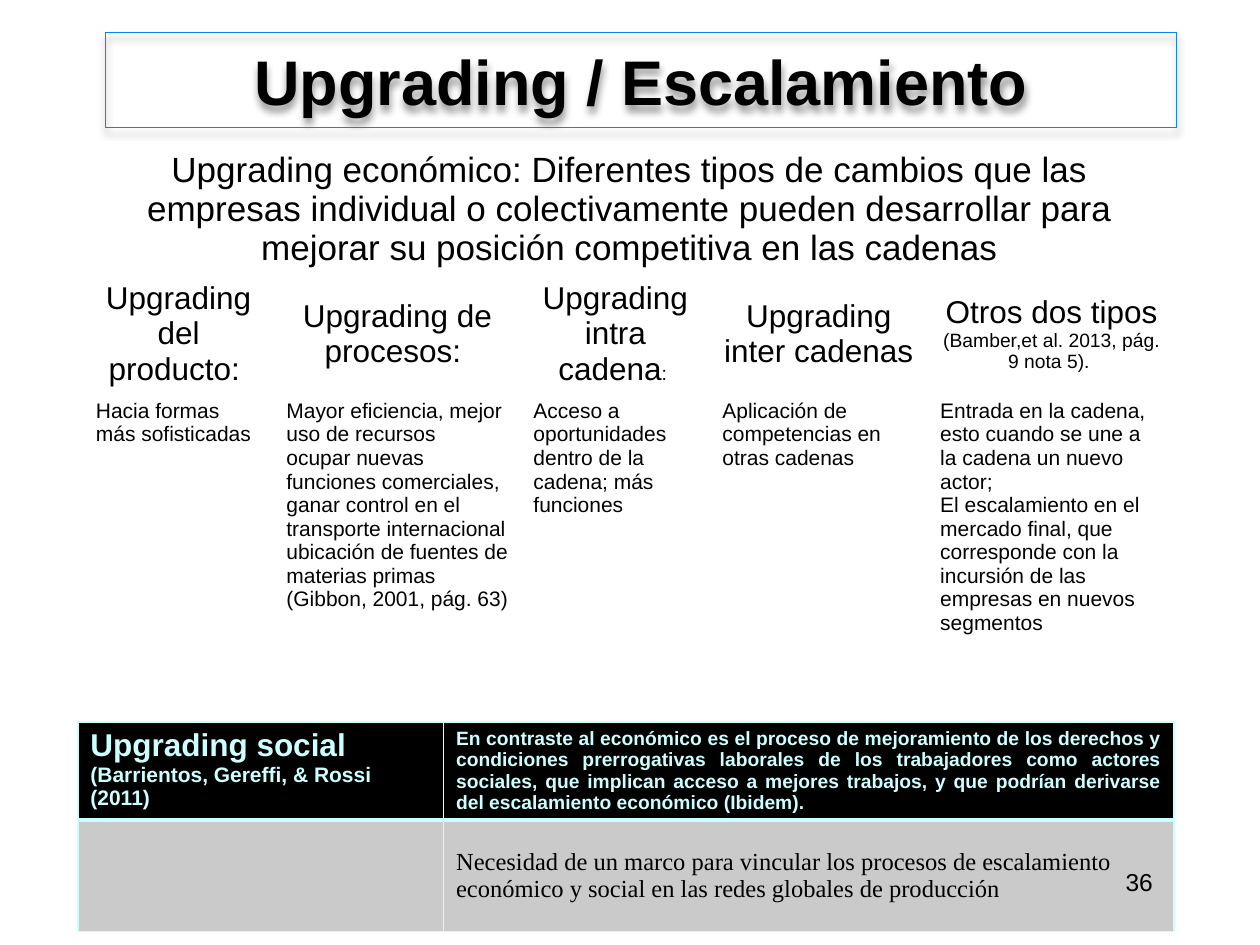
from dataclasses import dataclass
from typing import Optional

from lxml.etree import SubElement
from pptx import Presentation
from pptx.dml.color import RGBColor
from pptx.enum.shapes import MSO_SHAPE
from pptx.enum.text import MSO_ANCHOR, PP_ALIGN
from pptx.oxml import parse_xml
from pptx.oxml.ns import nsdecls, qn
from pptx.util import Cm, Pt


@dataclass(frozen=True)
class Theme:
    sans: str = "Arial"
    serif: str = "Times New Roman"
    ink: str = "000000"
    outline: str = "0A82FE"
    pale: str = "CCFFFF"
    band: str = "CACACA"
    title: float = 36
    intro: float = 20
    heading: float = 18
    closing: float = 14
    body: float = 12
    small: float = 11


THEME = Theme()


@dataclass(frozen=True)
class Span:
    text: str
    size: float = THEME.body
    color: str = THEME.ink
    bold: bool = False
    font: str = THEME.sans


@dataclass(frozen=True)
class Block:
    """Paragraphs, each a tuple of spans, with their shared layout."""
    paragraphs: tuple[tuple[Span, ...], ...] = ()
    align: PP_ALIGN = PP_ALIGN.LEFT
    anchor: MSO_ANCHOR = MSO_ANCHOR.TOP


@dataclass(frozen=True)
class Place:
    left: float
    top: float
    width: float
    height: float

    def lengths(self) -> tuple[Cm, ...]:
        return tuple(Cm(n) for n in (self.left, self.top, self.width, self.height))


def centered(*spans: Span) -> Block:
    return Block((spans,), PP_ALIGN.CENTER, MSO_ANCHOR.MIDDLE)


def body(*texts: str) -> Block:
    return Block(tuple((Span(text),) for text in texts))


def write(frame, block: Block) -> None:
    frame.word_wrap = True
    for index, spans in enumerate(block.paragraphs):
        para = frame.paragraphs[0] if index == 0 else frame.add_paragraph()
        para.alignment = block.align
        for span in spans:
            run = para.add_run()
            run.text = span.text
            run.font.name = span.font
            run.font.size = Pt(span.size)
            run.font.bold = span.bold
            run.font.color.rgb = RGBColor.from_string(span.color)


def draw_table(page, place: Place, columns: tuple[float, ...],
               rows: tuple[float, ...], blocks: list[list[Block]]):
    """Add an unfilled table and write one block into each listed cell."""
    frame = page.shapes.add_table(len(rows), len(columns), *place.lengths())
    table = frame.table
    table.first_row = table.horz_banding = False
    for column, width in zip(table.columns, columns):
        column.width = Cm(width)
    for row, height in zip(table.rows, rows):
        row.height = Cm(height)
    frame.height = Cm(place.height)
    for cell in table.iter_cells():
        cell.fill.background()
    for r, line in enumerate(blocks):
        for c, block in enumerate(line):
            cell = table.cell(r, c)
            cell.vertical_anchor = block.anchor
            write(cell.text_frame, block)
    return table


def set_borders(cell, color: str, top: float, bottom: float) -> None:
    properties = cell._tc.get_or_add_tcPr()
    edges = {"lnL": 1, "lnR": 1, "lnT": top, "lnB": bottom}
    for index, (edge, width) in enumerate(edges.items()):
        properties.insert(index, parse_xml(
            f'<a:{edge} {nsdecls("a")} w="{Pt(width)}"><a:solidFill>'
            f'<a:srgbClr val="{color}"/></a:solidFill></a:{edge}>'))


def add_shadow(shape) -> None:
    shape.shadow.inherit = False
    effects = shape._element.spPr.find(qn("a:effectLst"))
    shadow = SubElement(effects, qn("a:outerShdw"), blurRad=str(Pt(4)),
                        dist=str(Pt(3)), dir="5400000", rotWithShape="0")
    color = SubElement(shadow, qn("a:srgbClr"), val=THEME.ink)
    SubElement(color, qn("a:alpha"), val="40000")


def draw_title(page) -> None:
    box = page.shapes.add_shape(MSO_SHAPE.RECTANGLE,
                                *Place(2.13, 0.66, 21.59, 1.91).lengths())
    box.fill.background()
    box.line.color.rgb = RGBColor.from_string(THEME.outline)
    box.line.width = Pt(0.75)
    add_shadow(box)
    box.text_frame.vertical_anchor = MSO_ANCHOR.MIDDLE
    write(box.text_frame, centered(
        Span("Upgrading / Escalamiento", THEME.title, bold=True)))


def draw_economic_table(page) -> None:
    intro = centered(Span(
        "Upgrading económico: Diferentes tipos de cambios que las empresas "
        "individual o colectivamente pueden desarrollar para mejorar su "
        "posición competitiva en las cadenas", THEME.intro))
    headings = [
        centered(Span("Upgrading del producto: ", THEME.heading)),
        centered(Span("Upgrading de procesos: ", THEME.heading)),
        centered(Span("Upgrading intra cadena", THEME.heading),
                 Span(": ", THEME.small)),
        centered(Span("Upgrading inter cadenas", THEME.heading)),
        centered(Span("Otros dos tipos ", THEME.heading),
                 Span("(Bamber,et al. 2013, pág. 9 nota 5). ", THEME.small)),
    ]
    details = [
        body("Hacia formas más sofisticadas"),
        body("Mayor eficiencia, mejor uso de recursos",
             "ocupar nuevas funciones comerciales, ganar control en el "
             "transporte internacional ubicación de fuentes de materias "
             "primas (Gibbon, 2001, pág. 63)"),
        body("Acceso a oportunidades dentro de la cadena; más funciones"),
        body("Aplicación de competencias en otras cadenas"),
        body("Entrada en la cadena, esto cuando se une a la cadena un nuevo actor;",
             "El escalamiento en el mercado final, que corresponde con la "
             "incursión de las empresas en nuevos segmentos"),
    ]
    table = draw_table(page, Place(1.68, 2.92, 22.05, 11.2),
                       (3.84, 4.98, 3.81, 4.39, 5.0), (1.04, 0.81, 1.04, 1.04),
                       [[intro], headings, details])
    table.cell(0, 0).merge(table.cell(0, 4))


def draw_social_table(page) -> None:
    def pale(text: str, size: float) -> Span:
        return Span(text, size, THEME.pale, bold=True)

    name = Block(((pale("Upgrading social ", THEME.heading),
                   pale("(Barrientos, Gereffi, & Rossi (2011)", THEME.body)),))
    meaning = Block(((pale(
        "En contraste al económico es el proceso de mejoramiento de los "
        "derechos y condiciones prerrogativas laborales de los trabajadores "
        "como actores sociales, que implican acceso a mejores trabajos, y que "
        "podrían derivarse del escalamiento económico (Ibidem).",
        THEME.small),),), PP_ALIGN.JUSTIFY)
    need = Block(((Span(
        "Necesidad de un marco para vincular los procesos de escalamiento "
        "económico y social en las redes globales de producción",
        THEME.closing, font=THEME.serif),),), anchor=MSO_ANCHOR.MIDDLE)
    table = draw_table(page, Place(1.57, 14.55, 22.1, 3.89), (7.37, 14.73),
                       (1.57, 2.24), [[name, meaning], [Block(), need]])
    styles = ((THEME.ink, 1, 3), (THEME.band, 3, 1))
    for row, (fill, top, bottom) in zip(table.rows, styles):
        for cell in row.cells:
            cell.fill.solid()
            cell.fill.fore_color.rgb = RGBColor.from_string(fill)
            set_borders(cell, THEME.pale, top, bottom)


def draw_page_number(page) -> None:
    box = page.shapes.add_textbox(*Place(18.21, 17.35, 5.28, 1.27).lengths())
    write(box.text_frame, Block(((Span("36", THEME.closing),),), PP_ALIGN.RIGHT))


def main() -> None:
    deck = Presentation()
    deck.slide_width, deck.slide_height = Cm(25.4), Cm(19.05)
    page = deck.slides.add_slide(deck.slide_layouts[6])
    draw_title(page)
    draw_economic_table(page)
    draw_social_table(page)
    draw_page_number(page)
    deck.save("out.pptx")


if __name__ == "__main__":
    main()
